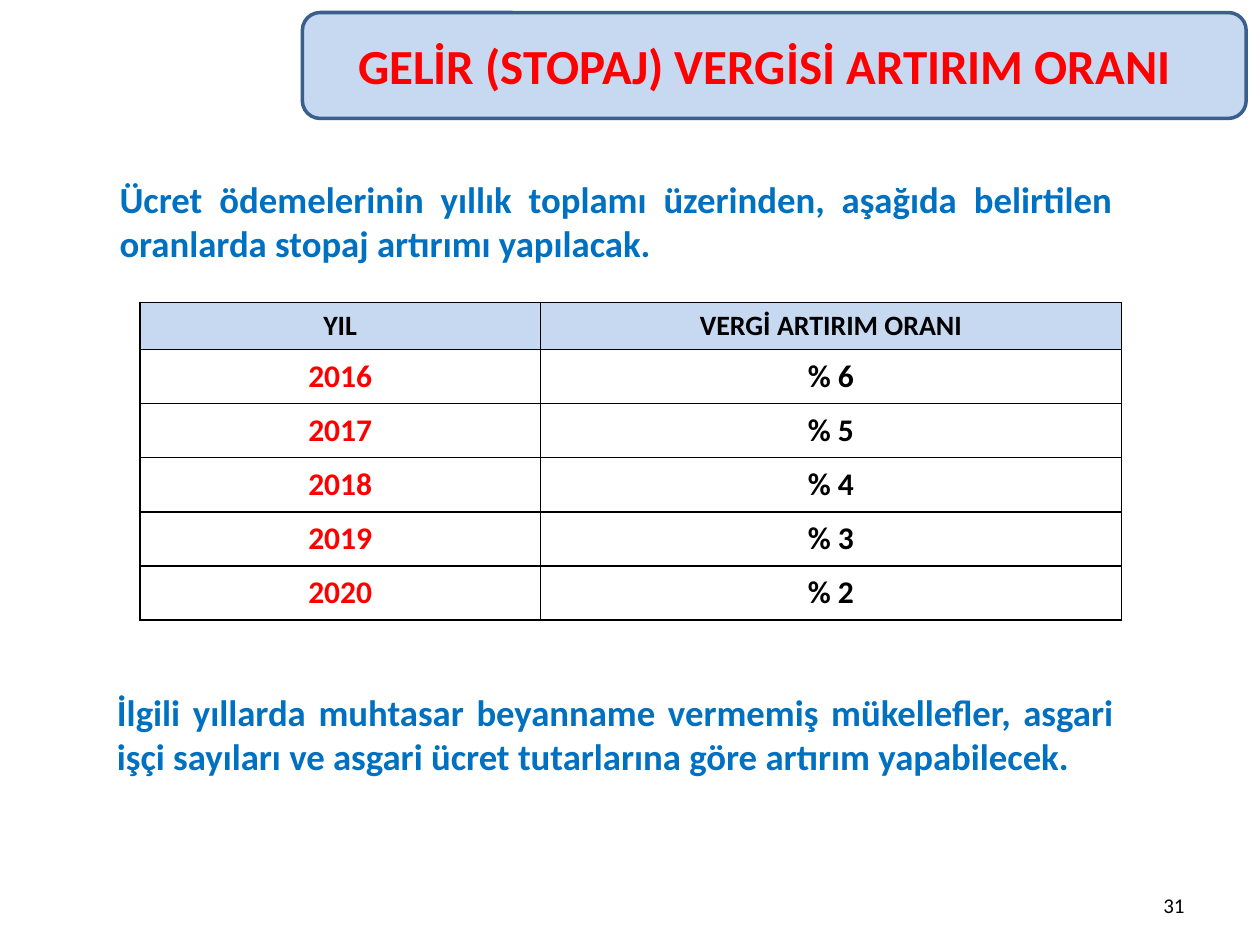
"""Build the slide on withholding tax increase rates."""
from dataclasses import dataclass

import lxml.etree
import pptx
import pptx.dml.color
import pptx.enum.shapes
import pptx.enum.text
import pptx.oxml
import pptx.oxml.ns
import pptx.util
from pptx.util import Inches

ALIGN = pptx.enum.text.PP_ALIGN
ANCHOR = pptx.enum.text.MSO_ANCHOR
BLACK, RED, BLUE, PALE_BLUE, NAVY = "000000", "FF0000", "0070C0", "C6D9F1", "3A5F8C"


@dataclass(frozen=True)
class TextStyle:
    size: float
    color: str
    align: ALIGN = ALIGN.CENTER
    bold: bool = True
    anchor: ANCHOR = ANCHOR.MIDDLE


@dataclass(frozen=True)
class Note:
    text: str
    box: tuple[float, float, float, float]
    style: TextStyle


NOTE_STYLE = TextStyle(21, BLUE, ALIGN.JUSTIFY)
HEADER_STYLE = TextStyle(16, BLACK)
YEAR_STYLE = TextStyle(18, RED)
RATE_STYLE = TextStyle(18, BLACK)
NOTES = [
    Note("Ücret ödemelerinin yıllık toplamı üzerinden, aşağıda belirtilen "
         "oranlarda stopaj artırımı yapılacak.", (0.85, 1.35, 8.08, 0.81), NOTE_STYLE),
    Note("İlgili yıllarda muhtasar beyanname vermemiş mükellefler, asgari işçi "
         "sayıları ve asgari ücret tutarlarına göre artırım yapabilecek.",
         (0.83, 5.42, 8.11, 0.81), NOTE_STYLE),
    Note("31", (7.17, 6.83, 2.33, 0.5),
         TextStyle(12, BLACK, ALIGN.RIGHT, False, ANCHOR.BOTTOM)),
]
HEADERS = ("YIL", "VERGİ ARTIRIM ORANI")
RATES = {"2016": "% 6", "2017": "% 5", "2018": "% 4", "2019": "% 3", "2020": "% 2"}
COLUMN_WIDTHS = (3.18, 4.61)
HEADER_HEIGHT, ROW_HEIGHT = 0.37, 0.43


def rgb(value: str) -> pptx.dml.color.RGBColor:
    return pptx.dml.color.RGBColor.from_string(value)


def set_text(frame, text: str, style: TextStyle) -> None:
    frame.text = text
    paragraph = frame.paragraphs[0]
    paragraph.alignment = style.align
    font = paragraph.runs[0].font
    formats = {"name": "Calibri", "size": pptx.util.Pt(style.size), "bold": style.bold}
    for attribute, value in formats.items():
        setattr(font, attribute, value)
    font.color.rgb = rgb(style.color)


def set_frame(frame, style: TextStyle) -> None:
    formats = {"word_wrap": True, "auto_size": pptx.enum.text.MSO_AUTO_SIZE.NONE,
               "vertical_anchor": style.anchor}
    for attribute, value in formats.items():
        setattr(frame, attribute, value)


def add_note(slide, note: Note) -> None:
    frame = slide.shapes.add_textbox(*map(Inches, note.box)).text_frame
    set_frame(frame, note.style)
    set_text(frame, note.text, note.style)


def add_heading(slide) -> None:
    banner = slide.shapes.add_shape(
        pptx.enum.shapes.MSO_SHAPE.ROUNDED_RECTANGLE, *map(Inches, (2.4, 0.1, 7.49, 0.84)))
    banner.shadow.inherit = False
    banner.fill.solid()
    banner.fill.fore_color.rgb = rgb(PALE_BLUE)
    banner.line.color.rgb = rgb(NAVY)
    banner.line.width = pptx.util.Pt(2)
    title = slide.shapes.title
    for attribute, value in zip(("left", "top", "width", "height"), (2.48, 0.23, 7.17, 0.57)):
        setattr(title, attribute, Inches(value))
    style = TextStyle(28, RED)
    set_frame(title.text_frame, style)
    set_text(title.text_frame, "GELİR (STOPAJ) VERGİSİ ARTIRIM ORANI", style)
    banner._element.addnext(title._element)


def add_borders(cell) -> None:
    properties = cell._tc.get_or_add_tcPr()
    for side in ("lnL", "lnR", "lnT", "lnB"):
        properties.append(pptx.oxml.parse_xml(
            f'<a:{side} {pptx.oxml.ns.nsdecls("a")} w="12700"><a:solidFill>'
            f'<a:srgbClr val="{BLACK}"/></a:solidFill></a:{side}>'))


def fill_cell(cell, text: str, style: TextStyle, fill: str | None = None) -> None:
    add_borders(cell)
    cell.vertical_anchor = ANCHOR.MIDDLE
    if fill:
        cell.fill.solid()
        cell.fill.fore_color.rgb = rgb(fill)
    else:
        cell.fill.background()
    set_text(cell.text_frame, text, style)


def add_rate_table(slide) -> None:
    height = HEADER_HEIGHT + ROW_HEIGHT * len(RATES)
    table = slide.shapes.add_table(
        len(RATES) + 1, len(HEADERS),
        *map(Inches, (1.11, 2.4, sum(COLUMN_WIDTHS), height))).table
    for column, width in zip(table.columns, COLUMN_WIDTHS):
        column.width = Inches(width)
    for index, row in enumerate(table.rows):
        row.height = Inches(ROW_HEIGHT if index else HEADER_HEIGHT)
    for index, header in enumerate(HEADERS):
        fill_cell(table.cell(0, index), header, HEADER_STYLE, PALE_BLUE)
    for index, (year, rate) in enumerate(RATES.items(), start=1):
        fill_cell(table.cell(index, 0), year, YEAR_STYLE)
        fill_cell(table.cell(index, 1), rate, RATE_STYLE)


def main() -> None:
    presentation = pptx.Presentation()
    presentation.slide_width = Inches(10)
    presentation.slide_height = Inches(7.5)
    slide = presentation.slides.add_slide(presentation.slide_layouts[5])
    add_heading(slide)
    add_rate_table(slide)
    for note in NOTES:
        add_note(slide, note)
    presentation.save("out.pptx")


if __name__ == "__main__":
    main()
